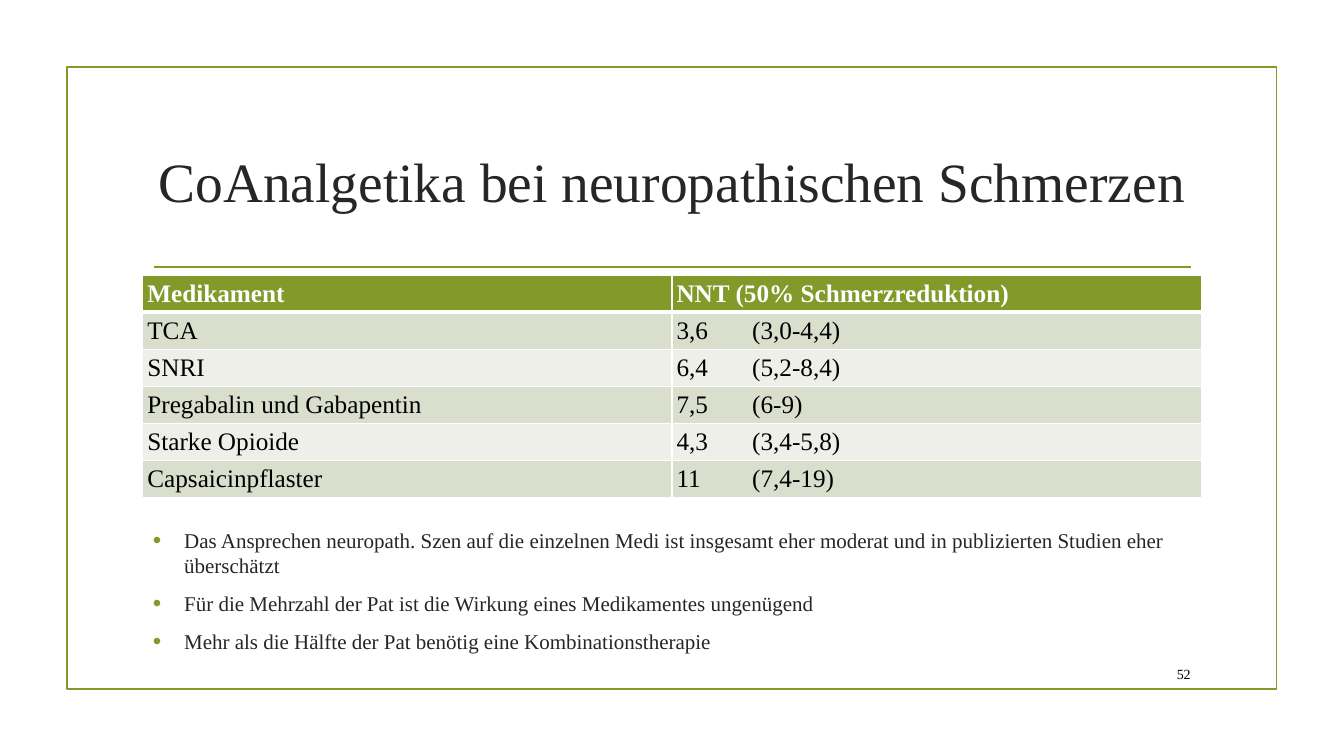
"""Build a slide on co-analgesics for neuropathic pain: title, NNT table and three remarks."""
from lxml.etree import SubElement
from pptx import Presentation
from pptx.dml.color import RGBColor
from pptx.enum.shapes import MSO_CONNECTOR, MSO_SHAPE
from pptx.enum.text import MSO_ANCHOR, MSO_AUTO_SIZE, PP_ALIGN
from pptx.oxml.ns import qn
from pptx.util import Inches, Pt

COLORS = {
    "olive": "83992A",
    "band": "D9DECD",
    "light_band": "EDEFE8",
    "text": "262626",
    "black": "000000",
    "white": "FFFFFF",
}
CONTENT_LEFT, CONTENT_WIDTH = 10.63, 78.75

presentation = Presentation()
presentation.slide_width = Inches(13.33)
presentation.slide_height = Inches(7.5)
slide = presentation.slides.add_slide(presentation.slide_layouts[1])


def share(left, top, width, height):
    """Turn percentages of the slide's width and height into lengths."""
    across, down = presentation.slide_width / 100, presentation.slide_height / 100
    return int(left * across), int(top * down), int(width * across), int(height * down)


def write(paragraph, text, size, color, bold=False):
    """Add one formatted run to a paragraph."""
    run = paragraph.add_run()
    run.text = text
    run.font.name = "Times New Roman"
    run.font.size = Pt(size)
    run.font.bold = bold
    run.font.color.rgb = RGBColor.from_string(COLORS[color])


frame = slide.shapes.add_shape(MSO_SHAPE.RECTANGLE, *share(4.98, 8.9, 90, 82.27))
frame.shadow.inherit = False
frame.fill.background()

rule_left, rule_top, rule_width, _ = share(11.48, 35.33, 77.12, 0)
rule = slide.shapes.add_connector(
    MSO_CONNECTOR.STRAIGHT, rule_left, rule_top, rule_left + rule_width, rule_top
)
SubElement(rule._element.spPr, qn("a:effectLst"))
for outline in (frame.line, rule.line):
    outline.color.rgb = RGBColor.from_string(COLORS["olive"])
    outline.width = Pt(1.25)

title = slide.shapes.title
title.left, title.top, title.width, title.height = share(CONTENT_LEFT, 14.27, CONTENT_WIDTH, 19.07)
title.text_frame.auto_size = MSO_AUTO_SIZE.NONE
title.text_frame.vertical_anchor = MSO_ANCHOR.MIDDLE
heading = title.text_frame.paragraphs[0]
heading.alignment = PP_ALIGN.CENTER
write(heading, "CoAnalgetika bei neuropathischen Schmerzen", 39.6, "text")

nnt_rows = [
    ("Medikament", "NNT (50% Schmerzreduktion)"),
    ("TCA", "3,6\t(3,0-4,4)"),
    ("SNRI", "6,4\t(5,2-8,4)"),
    ("Pregabalin und Gabapentin", "7,5\t(6-9)"),
    ("Starke Opioide", "4,3\t(3,4-5,8)"),
    ("Capsaicinpflaster", "11\t(7,4-19)"),
]
nnt_table = slide.shapes.add_table(
    len(nnt_rows), 2, *share(CONTENT_LEFT, 36.4, CONTENT_WIDTH, 4.67 * len(nnt_rows))
).table
for row, entries in enumerate(nnt_rows):
    is_header = row == 0
    fill = "olive" if is_header else ("light_band", "band")[row % 2]
    for column, entry in enumerate(entries):
        cell = nnt_table.cell(row, column)
        cell.margin_left = cell.margin_right = Pt(3.25)
        cell.margin_top = cell.margin_bottom = Pt(3.25)
        borders = {"lnL": 1, "lnR": 1, "lnT": 3 if row == 1 else 1, "lnB": 3 if is_header else 1}
        for side, points in borders.items():
            border = SubElement(cell._tc.get_or_add_tcPr(), qn(f"a:{side}"), w=str(Pt(points)))
            SubElement(SubElement(border, qn("a:solidFill")), qn("a:srgbClr"), val=COLORS["white"])
        cell.fill.solid()
        cell.fill.fore_color.rgb = RGBColor.from_string(COLORS[fill])
        paragraph = cell.text_frame.paragraphs[0]
        if "\t" in entry:
            tabs = SubElement(paragraph._p.get_or_add_pPr(), qn("a:tabLst"))
            SubElement(tabs, qn("a:tab"), pos=str(Inches(0.75)), algn="l")
        write(paragraph, entry, 18, "white" if is_header else "black", is_header)

remarks = [
    "Das Ansprechen neuropath. Szen auf die einzelnen Medi ist insgesamt eher moderat "
    "und in publizierten Studien eher überschätzt",
    "Für die Mehrzahl der Pat ist die Wirkung eines Medikamentes ungenügend",
    "Mehr als die Hälfte der Pat benötig eine Kombinationstherapie",
]
body = slide.placeholders[1]
body.left, body.top, body.width, body.height = share(CONTENT_LEFT, 69.07, CONTENT_WIDTH, 16.53)
body.text_frame.auto_size = MSO_AUTO_SIZE.NONE
for index, remark in enumerate(remarks):
    paragraph = body.text_frame.add_paragraph() if index else body.text_frame.paragraphs[0]
    properties = paragraph._p.get_or_add_pPr()
    properties.set("marL", str(Inches(0.31)))
    properties.set("indent", str(-Inches(0.31)))
    SubElement(SubElement(properties, qn("a:buClr")), qn("a:srgbClr"), val=COLORS["olive"])
    SubElement(properties, qn("a:buSzPct"), val="115000")
    SubElement(properties, qn("a:buFont"), typeface="Arial")
    SubElement(properties, qn("a:buChar"), char="•")
    paragraph.space_before = Pt(3 if index else 0)
    paragraph.space_after = Pt(6)
    write(paragraph, remark, 15, "text")

page = slide.shapes.add_textbox(*share(84.9, 87.07, 4.43, 4.13)).text_frame
page.word_wrap = True
page.vertical_anchor = MSO_ANCHOR.MIDDLE
page.paragraphs[0].alignment = PP_ALIGN.RIGHT
write(page.paragraphs[0], "52", 10, "black")

presentation.save("out.pptx")
